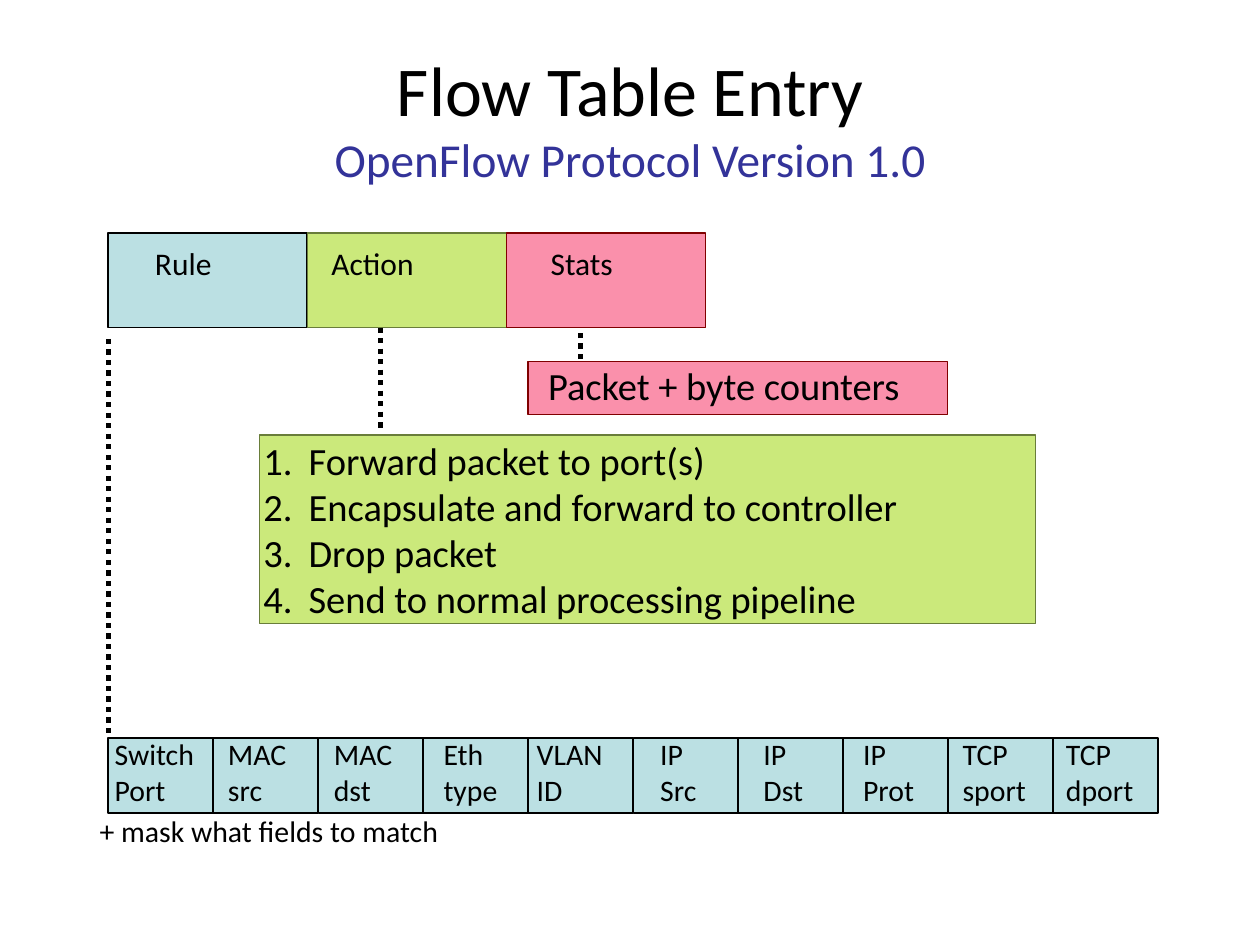
"""Build the flow table entry slide."""
from dataclasses import dataclass

from lxml.etree import SubElement
from pptx import Presentation
from pptx.dml.color import RGBColor
from pptx.enum.dml import MSO_LINE_DASH_STYLE as Dash
from pptx.enum.shapes import MSO_CONNECTOR as Connector, MSO_SHAPE as Shape
from pptx.enum.text import MSO_ANCHOR as Anchor, MSO_AUTO_SIZE as AutoSize, PP_ALIGN as Align
from pptx.oxml.ns import qn
from pptx.util import Inches, Pt

BLUE, GREEN, PINK = ("BBE0E3", "000000"), ("CBE97B", "697D3A"), ("FA90AB", "800000")
LEFT = 0.86
ENTRY_WIDTH, ENTRY_TOP = 1.58, 1.85
FIELD_PITCH, FIELD_TOP = 7.5 / 9, 5.86
NO_INSETS = {f"margin_{side}": 0 for side in ("left", "top", "right", "bottom")}


@dataclass
class Label:
    text: str
    left: float
    width: float


@dataclass
class Entry:
    label: Label
    colors: tuple[str, str]


@dataclass
class Leader:
    x: float
    start: float
    end: float


ENTRIES = [
    Entry(Label("Rule", 1.23, 0.52), BLUE),
    Entry(Label("Action", 2.63, 0.72), GREEN),
    Entry(Label("Stats", 4.37, 0.57), PINK),
]
FIELDS = [
    Label("Switch\nPort", 0.91, 0.7),
    Label("MAC\nsrc", 1.81, 0.53),
    Label("MAC\ndst", 2.65, 0.53),
    Label("Eth\ntype", 3.52, 0.45),
    Label("VLAN\nID", 4.26, 0.62),
    Label("IP\nSrc", 5.24, 0.36),
    Label("IP\nDst", 6.06, 0.36),
    Label("IP\nProt", 6.85, 0.44),
    Label("TCP\nsport", 7.64, 0.53),
    Label("TCP\ndport", 8.46, 0.54),
]
ACTIONS = [
    "Forward packet to port(s)",
    "Encapsulate and forward to controller",
    "Drop packet",
    "Send to normal processing pipeline",
]
LEADERS = [Leader(LEFT, 2.69, 5.85), Leader(3.02, 2.6, 3.43), Leader(4.61, 2.85, 2.6)]


def color(value: str) -> RGBColor:
    return RGBColor.from_string(value)


def apply(target, values: dict) -> None:
    for name, value in values.items():
        setattr(target, name, value)


def style(span, size: float, ink: str = "000000") -> None:
    apply(span.font, {"name": "Calibri", "size": Pt(size)})
    span.font.color.rgb = color(ink)


def add_box(page, left: float, top: float, width: float, height: float, colors: tuple[str, str]):
    box = page.shapes.add_shape(Shape.RECTANGLE, *map(Inches, (left, top, width, height)))
    fill, edge = colors
    box.shadow.inherit = False
    box.fill.solid()
    box.fill.fore_color.rgb = color(fill)
    box.line.color.rgb = color(edge)
    box.line.width = Pt(1)
    return box


def write_lines(frame, lines: list[str], size: float) -> None:
    for index, line in enumerate(lines):
        para = frame.add_paragraph() if index else frame.paragraphs[0]
        para.alignment = Align.LEFT
        span = para.add_run()
        span.text = line
        style(span, size)


def add_label(page, label: Label, top: float, height: float, size: float) -> None:
    box = page.shapes.add_textbox(*map(Inches, (label.left, top, label.width, height)))
    apply(box.text_frame, {
        **NO_INSETS,
        "word_wrap": False,
        "auto_size": AutoSize.SHAPE_TO_FIT_TEXT,
        "vertical_anchor": Anchor.MIDDLE,
    })
    write_lines(box.text_frame, label.text.split("\n"), size)


def add_title(page) -> None:
    box = page.shapes.add_textbox(*map(Inches, (0.5, 0.3, 9, 1.25)))
    apply(box.text_frame, {"word_wrap": True, "vertical_anchor": Anchor.MIDDLE})
    para = box.text_frame.paragraphs[0]
    para.alignment = Align.CENTER
    heading = para.add_run()
    heading.text = "Flow Table Entry"
    style(heading, 40)
    para.add_line_break()
    subtitle = para.add_run()
    subtitle.text = "OpenFlow Protocol Version 1.0"
    style(subtitle, 27, "333399")


def add_actions(page) -> None:
    box = add_box(page, 2.06, 3.45, 6.16, 1.5, GREEN)
    frame = box.text_frame
    apply(frame, {**NO_INSETS, "word_wrap": True, "vertical_anchor": Anchor.MIDDLE})
    write_lines(frame, ACTIONS, 22)
    for para in frame.paragraphs:
        properties = para._p.get_or_add_pPr()
        properties.set("marL", str(Inches(0.39)))
        properties.set("indent", str(Inches(-0.36)))
        SubElement(properties, qn("a:buFont"), typeface="Calibri")
        SubElement(properties, qn("a:buAutoNum"), type="arabicPeriod")


def add_leader(page, leader: Leader) -> None:
    ends = map(Inches, (leader.x, leader.start, leader.x, leader.end))
    connector = page.shapes.add_connector(Connector.STRAIGHT, *ends)
    apply(connector.line, {"width": Pt(3), "dash_style": Dash.ROUND_DOT})
    connector.line.color.rgb = color("000000")
    connector.line._ln.find(qn("a:prstDash")).set("val", "sysDot")
    SubElement(connector._element.spPr, qn("a:effectLst"))


def main() -> None:
    deck = Presentation()
    apply(deck, {"slide_width": Inches(10), "slide_height": Inches(7.5)})
    page = deck.slides.add_slide(deck.slide_layouts[6])
    add_title(page)
    for index, field in enumerate(FIELDS):
        add_box(page, LEFT + index * FIELD_PITCH, FIELD_TOP, FIELD_PITCH, 0.59, BLUE)
        add_label(page, field, 5.84, 0.57, 17)
    for index, entry in enumerate(ENTRIES):
        add_box(page, LEFT + index * ENTRY_WIDTH, ENTRY_TOP, ENTRY_WIDTH, 0.75, entry.colors)
        add_label(page, entry.label, 1.94, 0.3, 18)
    add_actions(page)
    add_label(page, Label("+ mask what fields to match", 0.79, 2.95), 6.45, 0.29, 17)
    add_box(page, 4.19, 2.87, 3.33, 0.42, PINK)
    add_label(page, Label("Packet + byte counters", 4.35, 3.15), 2.87, 0.37, 22)
    for leader in LEADERS:
        add_leader(page, leader)
    deck.save("out.pptx")


if __name__ == "__main__":
    main()
